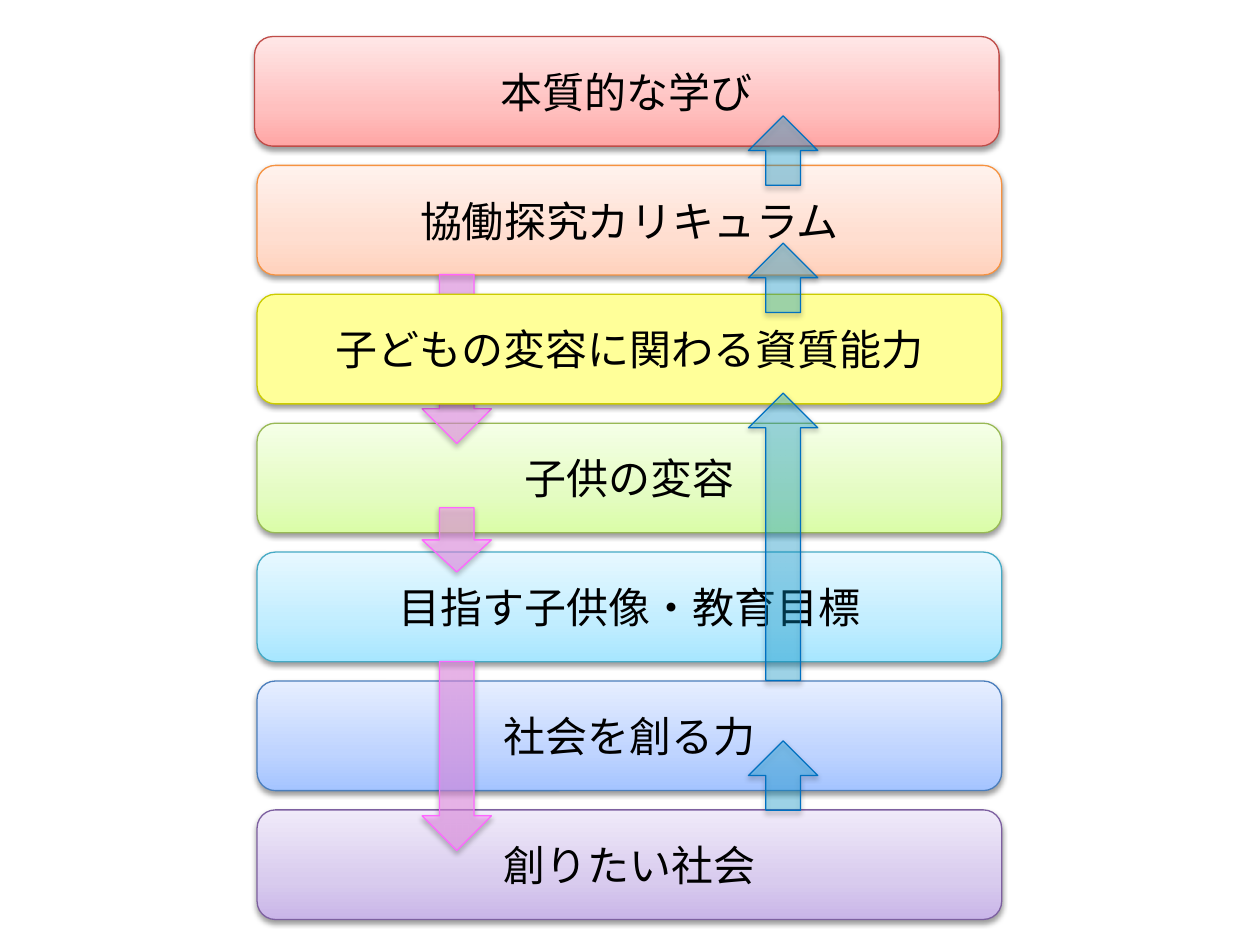
import copy
import pptx
import pptx.dml.color
import pptx.enum.shapes
import pptx.enum.text
import pptx.oxml
import pptx.oxml.ns
import pptx.util

Inches = pptx.util.Inches
Pt = pptx.util.Pt
RGB = pptx.dml.color.RGBColor
KIND = pptx.enum.shapes.MSO_SHAPE
qn = pptx.oxml.ns.qn
NS = pptx.oxml.ns.nsdecls("a")

FACE = "Noto Sans CJK JP"
BLACK = RGB(0, 0, 0)
PINK = RGB(0xFF, 0x99, 0xFF)
ROSE = RGB(0xFF, 0x66, 0xFF)
SKY = RGB(0x00, 0xB0, 0xF0)
BLUE = RGB(0x00, 0x70, 0xC0)
ORANGE = [RGB(0xFF, 0xD2, 0xBD), RGB(0xFF, 0xDE, 0xD0), RGB(0xFF, 0xF2, 0xED)]
AQUA = [RGB(0xA7, 0xE6, 0xFF), RGB(0xC1, 0xED, 0xFF), RGB(0xE7, 0xF8, 0xFF)]
AZURE = [RGB(0xA4, 0xC4, 0xFF), RGB(0xBF, 0xD4, 0xFF), RGB(0xE6, 0xEE, 0xFF)]
VIOLET = [RGB(0xC9, 0xB5, 0xE8), RGB(0xD8, 0xCB, 0xEE), RGB(0xF0, 0xEA, 0xF9)]
GREEN = [RGB(0xDA, 0xFD, 0xA7), RGB(0xE4, 0xFC, 0xC2), RGB(0xF5, 0xFF, 0xE7)]
RED = [RGB(0xFF, 0xA6, 0xA5), RGB(0xFF, 0xC0, 0xBF), RGB(0xFF, 0xE7, 0xE7)]
YELLOW = [RGB(0xFF, 0xFF, 0x99)]

PARTS = [
    ("bar", 1, "協働探究カリキュラム", ORANGE, RGB(0xF6, 0x92, 0x40)),
    ("bar", 4, "目指す子供像・教育目標", AQUA, RGB(0x46, 0xAA, 0xC5)),
    ("bar", 5, "社会を創る力", AZURE, RGB(0x4B, 0x7E, 0xBC)),
    ("bar", 6, "創りたい社会", VIOLET, RGB(0x7D, 0x60, 0xA0)),
    ("up", 5.88, 0.55),
    ("down", 5.25, 1.5),
    ("bar", 3, "子供の変容", GREEN, RGB(0x98, 0xB9, 0x55)),
    ("down", 2.18, 1.34),
    ("down", 4.03, 0.51),
    ("bar", 2, "子どもの変容に関わる資質能力", YELLOW, RGB(0xCC, 0xCC, 0x00)),
    ("up", 3.12, 2.28),
    ("bar", 0, "本質的な学び", RED, RGB(0xBF, 0x4C, 0x48)),
    ("up", 1.93, 0.55),
    ("up", 0.92, 0.55),
]
ARROWS = {"up": (5.94, 180, SKY, 30, BLUE), "down": (3.35, 0, PINK, 50, ROSE)}
STOPS = (0, 0.35, 1)
TOP, STEP = 0.29, 1.023
LEFT, SHIFT = 2.04, -0.02
WIDE, HIGH = 5.91, 0.87
FONT = {"size": Pt(24), "name": FACE}
SHADOW = (
    f'<a:outerShdw {NS} blurRad="40000" dist="20000" dir="5400000" rotWithShape="0">'
    '<a:srgbClr val="000000"><a:alpha val="38000"/></a:srgbClr></a:outerShdw>'
)


def add_base(kind, box, edge):
    shape = slide.shapes.add_shape(kind, *map(Inches, box))
    shape.line.color.rgb = edge
    shape.line.width = Pt(0.75)
    shape.shadow.inherit = False
    shape._element.spPr.find(qn("a:effectLst")).append(pptx.oxml.parse_xml(SHADOW))
    return shape


def shade(shape, tones):
    fill = shape.fill
    if len(tones) == 1:
        fill.solid()
        fill.fore_color.rgb = tones[0]
        return
    fill.gradient()
    fill.gradient_angle = 90
    stops = shape._element.spPr.find(".//" + qn("a:gsLst"))
    stops.append(copy.deepcopy(stops[0]))
    for stop, place, tone in zip(fill.gradient_stops, STOPS, tones):
        stop.position = place
        stop.color.rgb = tone


def add_bar(row, text, tones, edge):
    left = LEFT + (SHIFT if row == 0 else 0)
    shape = add_base(KIND.ROUNDED_RECTANGLE, (left, TOP + row * STEP, WIDE, HIGH), edge)
    shade(shape, tones)
    frame = shape.text_frame
    frame.vertical_anchor = pptx.enum.text.MSO_ANCHOR.MIDDLE
    para = frame.paragraphs[0]
    para.alignment = pptx.enum.text.PP_ALIGN.CENTER
    run = para.add_run()
    run.text = text
    for key, value in FONT.items():
        setattr(run.font, key, value)
    run.font.color.rgb = BLACK
    latin = run._r.rPr.find(qn("a:latin"))
    latin.addnext(pptx.oxml.parse_xml(f'<a:ea {NS} typeface="{FACE}"/>'))


def add_arrow(way, top, high):
    left, turn, tone, alpha, edge = ARROWS[way]
    shape = add_base(KIND.DOWN_ARROW, (left, top, 0.55, high), edge)
    shape.rotation = turn
    shade(shape, [tone])
    color = shape._element.spPr.find(qn("a:solidFill"))[0]
    color.append(pptx.oxml.parse_xml(f'<a:alpha {NS} val="{alpha * 1000}"/>'))


deck = pptx.Presentation()
deck.slide_width, deck.slide_height = Inches(10), Inches(7.5)
slide = deck.slides.add_slide(deck.slide_layouts[6])
for kind, *data in PARTS:
    if kind == "bar":
        add_bar(*data)
    else:
        add_arrow(kind, *data)
deck.save("out.pptx")
